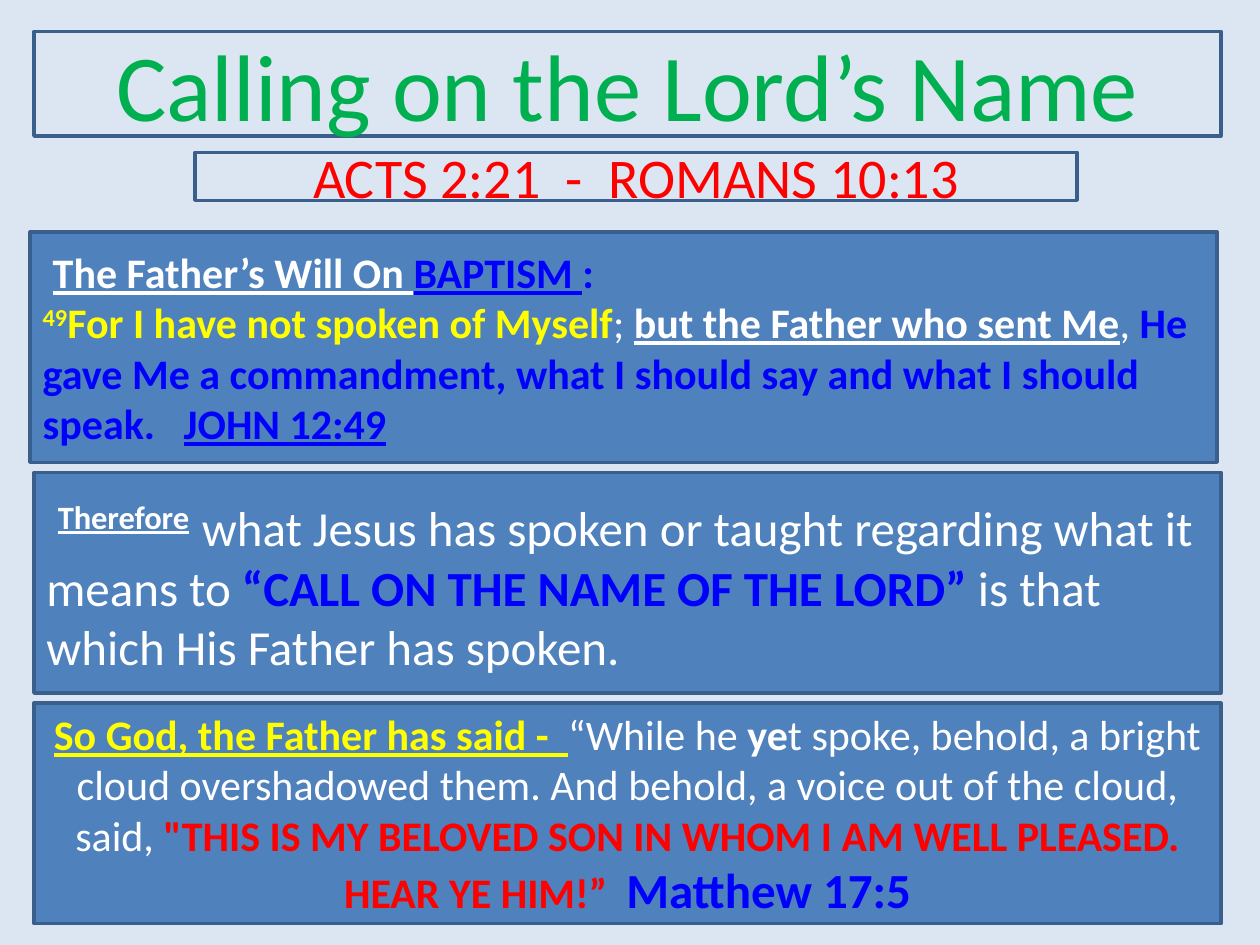
from pptx import Presentation
from pptx.dml.color import RGBColor
from pptx.enum.shapes import MSO_SHAPE
from pptx.enum.text import MSO_ANCHOR, PP_ALIGN
from pptx.util import Inches, Pt

COLORS = {
    "background": "DCE6F2", "panel": "4F81BD", "border": "3A5F8C",
    "green": "00B050", "red": "FF0000", "white": "FFFFFF",
    "blue": "0000FF", "yellow": "FFFF00",
}
COLUMNS, ROWS = 100, 75
LEFT, WIDTH, GAP = 2.7, 94.2, 0.8


def rgb(name):
    return RGBColor.from_string(COLORS[name])


class SlideBuilder:
    """Holds the style and the current slide; lengths are grid columns and rows."""
    font = "Calibri"
    border_width = Pt(2)

    def __init__(self, prs):
        self.column = prs.slide_width / COLUMNS
        self.row = prs.slide_height / ROWS
        self.s = prs.slides.add_slide(prs.slide_layouts[6])
        fill = self.s.background.fill
        fill.solid()
        fill.fore_color.rgb = rgb("background")

    def box(self, x, y, w, h, fill=None):
        sp = self.s.shapes.add_shape(
            MSO_SHAPE.RECTANGLE, round(x * self.column), round(y * self.row),
            round(w * self.column), round(h * self.row))
        sp.shadow.inherit = False
        if fill:
            sp.fill.solid()
            sp.fill.fore_color.rgb = rgb(fill)
        else:
            sp.fill.background()
        sp.line.color.rgb = rgb("border")
        sp.line.width = self.border_width
        tf = sp.text_frame
        tf.word_wrap = True
        tf.vertical_anchor = MSO_ANCHOR.MIDDLE
        return tf

    def paragraph(self, p, runs, size, align=PP_ALIGN.LEFT, indent=0):
        p.alignment = align
        if indent:
            p._p.get_or_add_pPr().set("indent", str(Inches(indent)))
        for text, color, *marks in runs:
            self.run(p, text, color, size, marks)

    def run(self, p, text, color, size, marks):
        """Marks: 'b' bold, 'u' underlined, 'sup' superscript, a number for its own size."""
        r = p.add_run()
        r.text = text
        r.font.name = self.font
        r.font.size = Pt(next((m for m in marks if isinstance(m, int)), size))
        r.font.color.rgb = rgb(color)
        r.font.bold = "b" in marks
        r.font.underline = "u" in marks
        if "sup" in marks:
            r._r.get_or_add_rPr().set("baseline", "30000")


def main():
    prs = Presentation()
    prs.slide_width, prs.slide_height = Inches(10), Inches(7.5)
    slide = SlideBuilder(prs)

    # Title and scripture references
    title = slide.box(LEFT, 2.5, WIDTH, 8.3)
    slide.paragraph(title.paragraphs[0], [("Calling on the Lord’s Name", "green")],
                    54, PP_ALIGN.CENTER)
    verses = slide.box(15.5, 12.1, 70, 3.8)
    slide.paragraph(verses.paragraphs[0], [("ACTS 2:21  -  ROMANS 10:13", "red")],
                    32, PP_ALIGN.CENTER)

    # The Father's will
    top, height = 18.4, 18.3
    will = slide.box(LEFT - 0.3, top, WIDTH, height, "panel")
    slide.paragraph(will.paragraphs[0], [
        ("The Father’s Will On ", "white", "b", "u"),
        ("BAPTISM ", "blue", "b", "u"),
        (":", "blue", "b"),
    ], 24, indent=0.08)
    slide.paragraph(will.add_paragraph(), [
        ("49", "yellow", "b", "sup"),
        ("For I have not spoken of Myself", "yellow", "b"),
        ("; ", "white"),
        ("but the Father who sent Me", "white", "b", "u"),
        (", ", "white"),
        ("He gave Me a commandment, what I should say and what I should speak.   ",
         "blue", "b"),
        ("JOHN 12:49", "blue", "b", "u"),
    ], 24)

    # What follows from it
    top, height = top + height + GAP, 17.5
    therefore = slide.box(LEFT, top, WIDTH, height, "panel")
    slide.paragraph(therefore.paragraphs[0], [
        ("Therefore", "white", "b", "u", "sup", 32),
        (" ", "white", 32),
        ("what Jesus has spoken or taught regarding what it means to ", "white"),
        ("“CALL ON THE NAME OF THE LORD” ", "blue", "b"),
        ("is that which His Father has spoken.", "white"),
    ], 28, indent=0.09)

    # What the Father has said
    top += height + GAP
    said = slide.box(LEFT, top, WIDTH, height, "panel")
    slide.paragraph(said.paragraphs[0], [
        ("So God, the Father has said -  ", "yellow", "b", "u"),
        ("“While he ", "white"),
        ("ye", "white", "b"),
        ("t spoke, behold, a bright cloud overshadowed them. And behold, "
         "a voice out of the cloud, said, ", "white"),
        ('"THIS IS MY BELOVED SON IN WHOM I AM WELL PLEASED. HEAR YE HIM!”  ',
         "red", "b"),
        ("Matthew 17:5", "blue", "b", 28),
    ], 24, PP_ALIGN.CENTER)

    prs.save("out.pptx")


if __name__ == "__main__":
    main()
